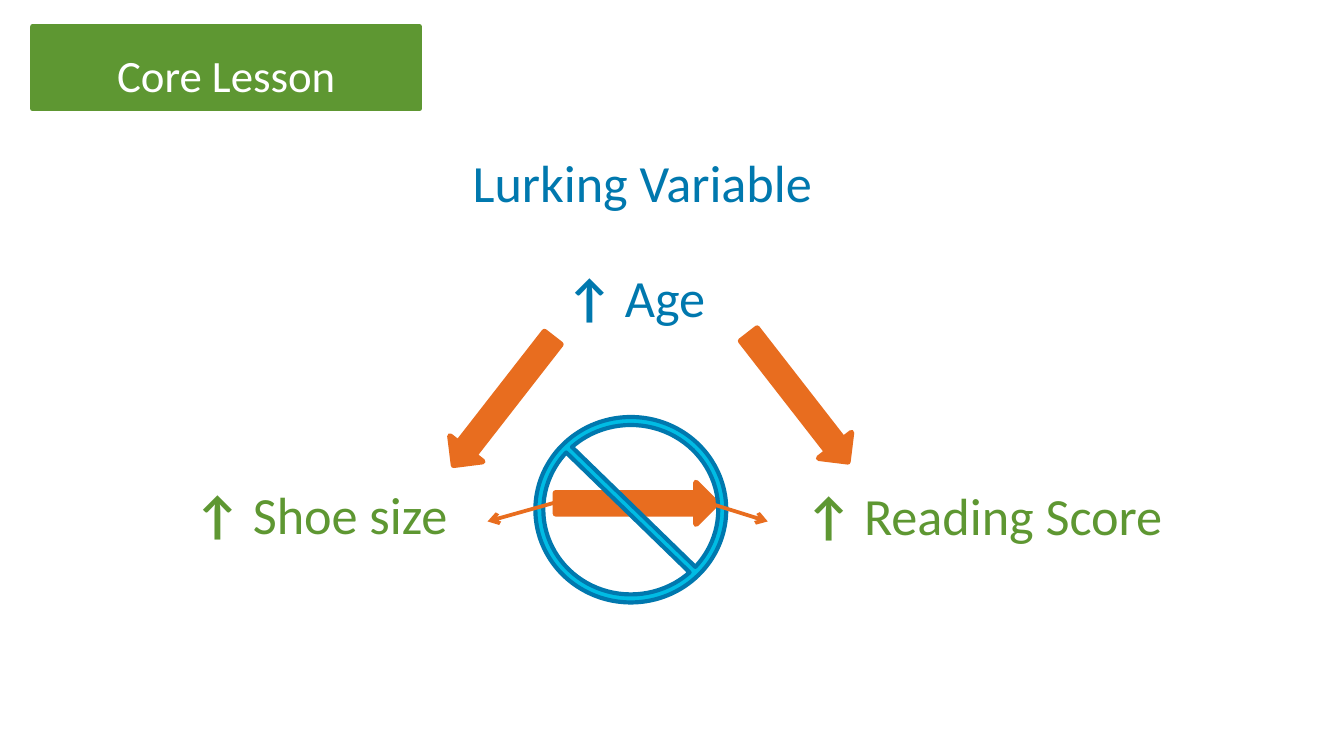
from lxml import etree
from pptx import Presentation
from pptx.dml.color import RGBColor
from pptx.enum.shapes import MSO_CONNECTOR, MSO_SHAPE
from pptx.enum.text import MSO_ANCHOR, MSO_AUTO_SIZE, PP_ALIGN
from pptx.oxml.ns import qn
from pptx.util import Pt

CENTER = PP_ALIGN.CENTER
TOP, BOTTOM = MSO_ANCHOR.TOP, MSO_ANCHOR.BOTTOM
FIXED = MSO_AUTO_SIZE.NONE
ARROW, BAN = MSO_SHAPE.RIGHT_ARROW, MSO_SHAPE.NO_SYMBOL
LINE = MSO_CONNECTOR.STRAIGHT

HUES = {"green": "5E9732", "blue": "0078AE", "cyan": "00BCE4",
        "orange": "E86D1F", "white": "FFFFFF"}
TITLE = ("Core Lesson", (17.5, 14.4, 207.36, 43.7))
LABELS = [
    ([" Lurking Variable"], "blue", (169.2, 77.04, 343.44)),
    ([" ", "↑", " Shoe size"], "green", (34.3, 254.88, 268.56)),
    ([" ", "↑", " Reading Score"], "green", (352.08, 255.6, 343.44)),
    ([" ", "↑", " Age"], "blue", (165.6, 138.7, 343.44)),
]
TALL = 25.92
SIZE = (86.4, 22.32)
TILT = 52.1
SHAPES = [
    (ARROW, (297.6, 258.48, *SIZE), 0, "orange", "orange", 3),
    (BAN, (286.8, 223.4, 102.24, 99.36), 0, "cyan", "blue", 2.25),
    (ARROW, (384.48, 202.2, *SIZE), TILT, "orange", "orange", 3),
    (ARROW, (226.3, 204, *SIZE), 180 - TILT, "orange", "orange", 3),
]
RISE = (267.84, 279.36)
LINKS = [(302.4, 261.2), (374.4, 411.3)]


def hue(name):
    return RGBColor.from_string(HUES[name])


def paint(shape, fill, edge, width):
    shape.fill.solid()
    shape.fill.fore_color.rgb = hue(fill)
    shape.line.color.rgb = hue(edge)
    shape.line.width = Pt(width)


def write(shape, parts, size, color, anchor):
    frame = shape.text_frame
    form = {"word_wrap": True, "auto_size": FIXED, "vertical_anchor": anchor}
    for key, val in form.items():
        setattr(frame, key, val)
    para = frame.paragraphs[0]
    para.alignment = CENTER
    for part in parts:
        run = para.add_run()
        run.text = part
        face = {"name": "Calibri", "size": Pt(size), "bold": part == "↑"}
        for key, val in face.items():
            setattr(run.font, key, val)
        run.font.color.rgb = hue(color)


deck = Presentation()
deck.slide_width, deck.slide_height = Pt(720), Pt(405)
slide = deck.slides.add_slide(deck.slide_layouts[5])
shapes = slide.shapes

text, box = TITLE
title = shapes.title
for key, val in zip(("left", "top", "width", "height"), box):
    setattr(title, key, Pt(val))
paint(title, "green", "green", 3)
write(title, [text], 24, "white", BOTTOM)

for parts, color, box in LABELS:
    label = shapes.add_textbox(*map(Pt, (*box, TALL)))
    write(label, parts, 28, color, TOP)

for kind, box, turn, fill, edge, width in SHAPES:
    shape = shapes.add_shape(kind, *map(Pt, box))
    shape.shadow.inherit = False
    shape.rotation = turn
    paint(shape, fill, edge, width)
    if kind == BAN:
        shape.adjustments[0] = 0.043

for start, end in LINKS:
    link = shapes.add_connector(LINE, Pt(start), Pt(RISE[0]), Pt(end), Pt(RISE[1]))
    link.line.color.rgb = hue("orange")
    link.line.width = Pt(2)
    props = link._element.spPr
    etree.SubElement(props.find(qn("a:ln")), qn("a:tailEnd"), type="arrow")
    etree.SubElement(props, qn("a:effectLst"))

deck.save("out.pptx")
